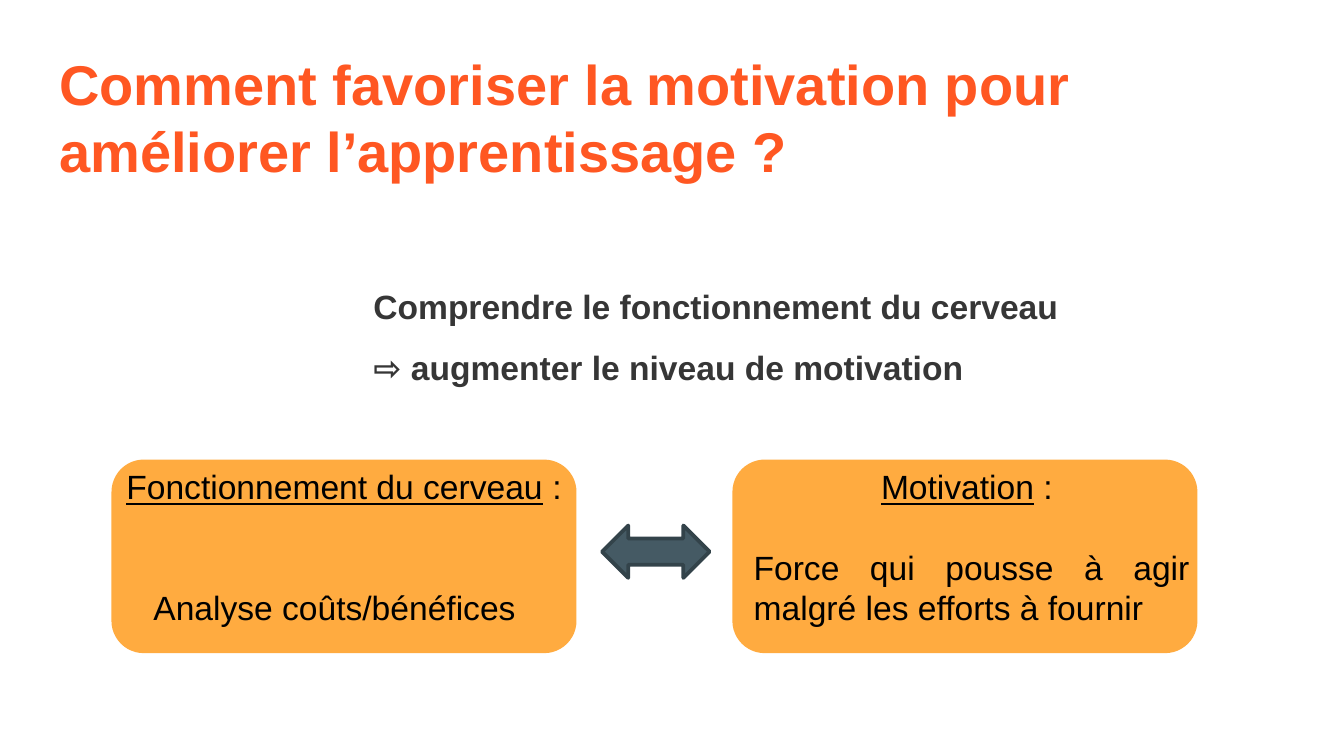
from pptx import Presentation
from pptx.dml.color import RGBColor as RGB
from pptx.enum.shapes import MSO_SHAPE as Shape
from pptx.enum.text import MSO_ANCHOR as Anchor, MSO_AUTO_SIZE as Fit, PP_ALIGN as Align
from pptx.util import Inches, Pt

WIDE = 10
HIGH = WIDE * 9 / 16
RED = RGB(0xFF, 0x57, 0x22)
GREY = RGB(0x36, 0x36, 0x36)
BLACK = RGB(0, 0, 0)
AMBER = RGB(0xFF, 0xAB, 0x40)
SLATE = RGB(0x45, 0x5A, 0x64)
EDGE = RGB(0x33, 0x43, 0x4A)

LINE = 21.6  # height of one free line in a card, in points
ROW = 3.42  # top of the two cards
CARD = (3.46, 1.44)


def place(box):
    return [Inches(n) for n in box]


def style(par, size, color, bold=False, align=Align.LEFT):
    font = par.font
    font.name, font.size, font.bold = "Arial", Pt(size), bold
    font.color.rgb = color
    par.alignment = align


def indent(par, side, size):
    par._p.get_or_add_pPr().set(side, str(Inches(size)))


def frame(shape, pad=0.1):
    text = shape.text_frame
    text.word_wrap = True
    text.auto_size = Fit.NONE
    text.vertical_anchor = Anchor.TOP
    text.margin_left = text.margin_right = Inches(0.1)
    text.margin_top = text.margin_bottom = Inches(pad)
    return text


def block(slide, kind, box, fill):
    shape = slide.shapes.add_shape(kind, *place(box))
    shape.shadow.inherit = False
    shape.fill.solid()
    shape.fill.fore_color.rgb = fill
    shape.line.fill.background()
    return shape


def head(slide, box):
    title = slide.shapes.title
    title.left, title.top, title.width, title.height = place(box)
    par = frame(title).paragraphs[0]
    par.text = "Comment favoriser la motivation pour améliorer l’apprentissage ?"
    style(par, 30, RED, True)


def goal(slide, box):
    par = frame(slide.shapes.add_textbox(*place(box))).paragraphs[0]
    par.text = "Comprendre le fonctionnement du cerveau ⇨ augmenter le niveau de motivation"
    style(par, 18, GREY, True)
    par.line_spacing = 1.5
    indent(par, "marL", 0.12)


def card(slide, box, area, name, body, skip, align, trims):
    """Rounded card; area is its text box, skip the free lines, trims the right indents."""
    block(slide, Shape.ROUNDED_RECTANGLE, box, AMBER)
    text = frame(slide.shapes.add_textbox(*place(area)), 0.05)
    top = text.paragraphs[0]
    style(top, 18, BLACK, align=Align.CENTER)
    run = top.add_run()
    run.text = name
    run.font.underline = True
    top.add_run().text = " :"
    par = text.add_paragraph()
    par.text = body
    style(par, 18, BLACK, align=align)
    par.space_before = Pt(skip * LINE)
    for item, trim in zip((top, par), trims):
        indent(item, "marR", trim)


def link(slide, box):
    arrow = block(slide, Shape.LEFT_RIGHT_ARROW, box, SLATE)
    arrow.line.color.rgb = EDGE
    arrow.line.width = Pt(2)


def main():
    deck = Presentation()
    deck.slide_width, deck.slide_height = Inches(WIDE), Inches(HIGH)
    slide = deck.slides.add_slide(deck.slide_layouts[5])

    # Title and aim
    head(slide, (0.34, 0.27, WIDE - 2 * 0.34, 0.63))
    goal(slide, (2.56, 1.88, 5.51, 0.63))

    # Two cards joined by an arrow
    card(slide, (5.45, ROW, *CARD), (5.51, ROW, 3.44, 1.31), "Motivation",
         "Force qui pousse à agir malgré les efforts à fournir", 1, Align.JUSTIFY, (0.07, 0))
    card(slide, (0.83, ROW, *CARD), (0.71, ROW, 3.7, 1.31), "Fonctionnement du cerveau",
         "Analyse coûts/bénéfices", 2, Align.CENTER, (0, 0.14))
    link(slide, (4.48, 3.91, 0.8, 0.39))

    deck.save("out.pptx")


if __name__ == "__main__":
    main()
